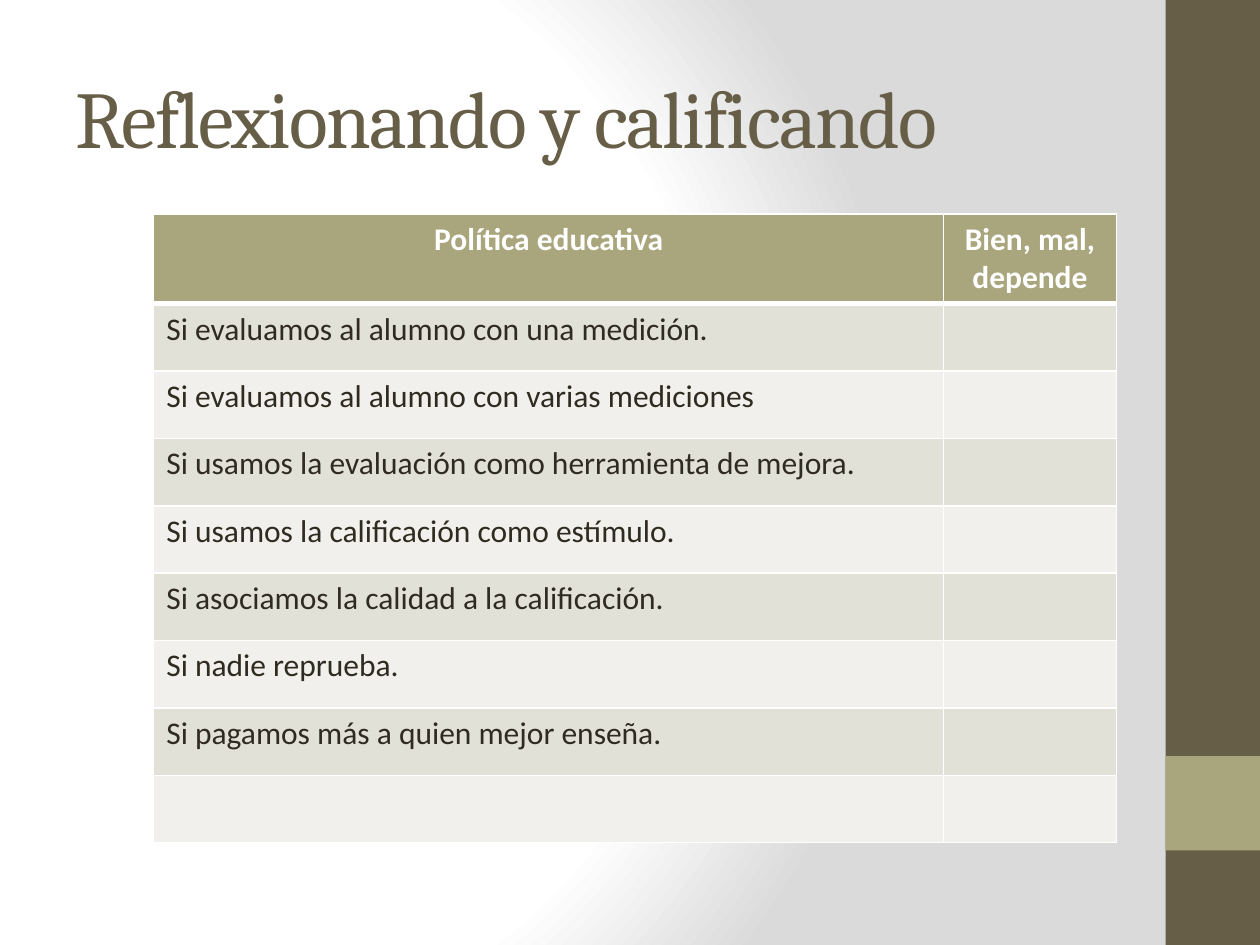
import pptx
import pptx.util
import pptx.dml.color
import pptx.enum.shapes
import pptx.enum.text
import pptx.oxml
import pptx.oxml.ns

Inches = pptx.util.Inches
RGBColor = pptx.dml.color.RGBColor
Align = pptx.enum.text.PP_ALIGN

BROWN = RGBColor(0x67, 0x5E, 0x47)
OLIVE = RGBColor(0xA9, 0xA5, 0x7C)
INK = RGBColor(0x2F, 0x2B, 0x20)
WHITE = RGBColor(0xFF, 0xFF, 0xFF)
GREY = RGBColor(0xDA, 0xDA, 0xDA)
BANDS = (RGBColor(0xE2, 0xE1, 0xD7), RGBColor(0xF1, 0xF0, 0xEC))

HEADINGS = ("Política educativa", "Bien, mal, depende")
POLICIES = (
    "Si evaluamos al alumno con una medición.",
    "Si evaluamos al alumno con varias mediciones",
    "Si usamos la evaluación como herramienta de mejora.",
    "Si usamos la calificación como estímulo.",
    "Si asociamos la calidad a la calificación.",
    "Si nadie reprueba.",
    "Si pagamos más a quien mejor enseña.",
    "",
)


def write_text(text_frame, text, size=18, font="Calibri", color=INK,
               bold=False, align=Align.LEFT, spacing=None):
    """Fill the frame with one formatted paragraph; spacing is in points."""
    paragraph = text_frame.paragraphs[0]
    paragraph.alignment = align
    paragraph.font.size = pptx.util.Pt(size)
    if not text:
        return
    run = paragraph.add_run()
    run.text = text
    run.font.size = pptx.util.Pt(size)
    run.font.name = font
    run.font.bold = bold
    run.font.color.rgb = color
    if spacing is not None:
        run.font._element.set("spc", str(int(spacing * 100)))


def set_background(slide):
    """Give the slide a circular gradient from white to grey."""
    stops = "".join(
        f'<a:gs pos="{position * 1000}"><a:srgbClr val="{color}"/></a:gs>'
        for position, color in ((0, WHITE), (75, WHITE), (100, GREY)))
    gradient = pptx.oxml.parse_xml(
        f'<a:gradFill {pptx.oxml.ns.nsdecls("a")} rotWithShape="1">'
        f'<a:gsLst>{stops}</a:gsLst><a:path path="circle">'
        '<a:fillToRect l="20000" t="50000" r="100000" b="50000"/>'
        '</a:path></a:gradFill>')
    fill = slide.background.fill
    fill.solid()
    solid = slide._element.find(".//" + pptx.oxml.ns.qn("p:bgPr"))[0]
    solid.getparent().replace(solid, gradient)


def add_block(slide, left, top, width, height, color):
    block = slide.shapes.add_shape(
        pptx.enum.shapes.MSO_SHAPE.RECTANGLE, left, top, width, height)
    block.shadow.inherit = False
    block.fill.solid()
    block.fill.fore_color.rgb = color
    block.line.fill.background()


def add_side_bar(slide, left, top, width, height):
    add_block(slide, left, top, width, height, BROWN)
    add_block(slide, left, top + height - 2 * width, width, width, OLIVE)


def place_title(slide, left, top, width, height):
    title = slide.shapes.title
    title.left, title.top, title.width, title.height = left, top, width, height
    title.text_frame.vertical_anchor = pptx.enum.text.MSO_ANCHOR.MIDDLE
    write_text(title.text_frame, "Reflexionando y calificando", size=46,
               font="Cambria", color=BROWN, spacing=-1)


def style_cell(cell, color, top=1, bottom=1):
    """Set the fill and white borders; top and bottom widths are in points."""
    properties = cell._tc.get_or_add_tcPr()
    for side, points in (("L", 1), ("R", 1), ("T", top), ("B", bottom)):
        properties.append(pptx.oxml.parse_xml(
            f'<a:ln{side} {pptx.oxml.ns.nsdecls("a")} w="{points * 12700}">'
            f'<a:solidFill><a:srgbClr val="{WHITE}"/></a:solidFill>'
            f'</a:ln{side}>'))
    cell.fill.solid()
    cell.fill.fore_color.rgb = color


def add_policy_table(slide, left, top, width, height):
    rating_width = Inches(1.37)
    header_height = Inches(0.7)
    table = slide.shapes.add_table(
        len(POLICIES) + 1, len(HEADINGS), left, top, width, height).table
    table.columns[0].width = width - rating_width
    table.columns[1].width = rating_width
    for row in table.rows:
        row.height = (height - header_height) // len(POLICIES)
    table.rows[0].height = header_height

    for column, heading in enumerate(HEADINGS):
        cell = table.cell(0, column)
        style_cell(cell, OLIVE, bottom=3)
        write_text(cell.text_frame, heading, color=WHITE, bold=True,
                   align=Align.CENTER)
    for index, policy in enumerate(POLICIES):
        for column, text in enumerate((policy, "")):
            cell = table.cell(index + 1, column)
            style_cell(cell, BANDS[index % 2], top=3 if index == 0 else 1)
            write_text(cell.text_frame, text)


def main():
    presentation = pptx.Presentation()
    presentation.slide_width = Inches(10)
    presentation.slide_height = Inches(7.5)
    slide = presentation.slides.add_slide(presentation.slide_layouts[5])
    set_background(slide)
    add_side_bar(slide, Inches(9.25), 0, Inches(0.75), Inches(7.5))
    place_title(slide, Inches(0.5), Inches(0.3), Inches(8.33), Inches(1.25))
    add_policy_table(slide, Inches(1.22), Inches(1.7), Inches(7.64), Inches(4.98))
    presentation.save("out.pptx")


if __name__ == "__main__":
    main()
